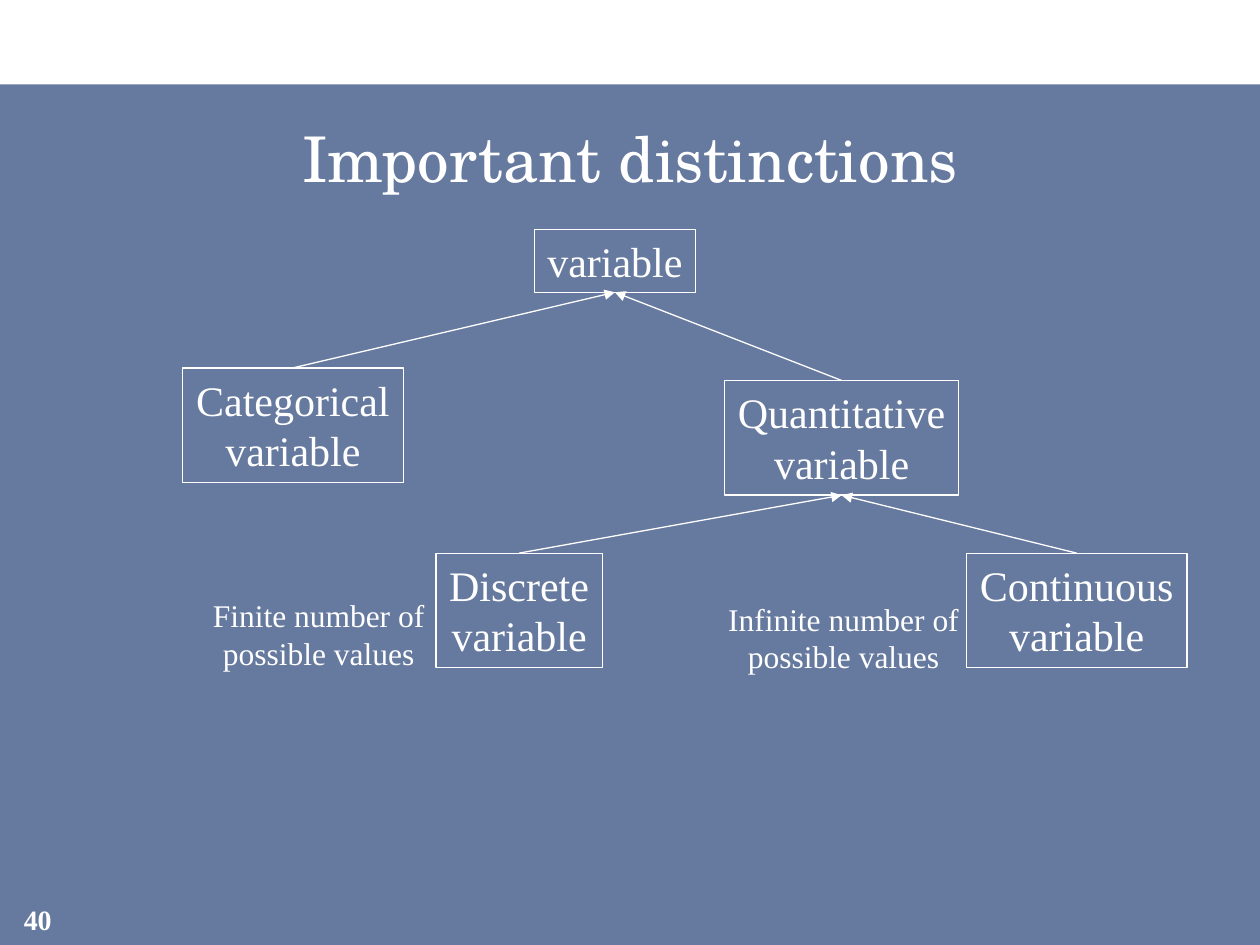
from lxml.etree import SubElement
from pptx import Presentation
from pptx.dml.color import RGBColor
from pptx.enum.shapes import MSO_CONNECTOR, MSO_SHAPE
from pptx.enum.text import MSO_ANCHOR, MSO_AUTO_SIZE, PP_ALIGN
from pptx.oxml.ns import qn
from pptx.util import Inches, Pt

COLOURS = {"panel": "002060", "ink": "FFFFFF"}
SERIF = "Times New Roman"
TITLE_FONT = "TeX Gyre Schola"
TOP, BOTTOM = 0, 2


def colour(name):
    return RGBColor.from_string(COLOURS[name])


def write(shape, lines, size, font=SERIF, bold=False, fit=False):
    """Fill a shape with centred lines; fit lets it grow around its text."""
    frame = shape.text_frame
    frame.word_wrap = not fit
    frame.auto_size = MSO_AUTO_SIZE.SHAPE_TO_FIT_TEXT if fit else MSO_AUTO_SIZE.NONE
    frame.vertical_anchor = MSO_ANCHOR.TOP if fit else MSO_ANCHOR.MIDDLE
    for index, line in enumerate(lines):
        paragraph = frame.add_paragraph() if index else frame.paragraphs[0]
        paragraph.alignment = PP_ALIGN.CENTER
        run = paragraph.add_run()
        run.text = line
        run.font.name = font
        run.font.size = Pt(size)
        run.font.bold = bold
        run.font.color.rgb = colour("ink")


def add_rectangle(slide, left, top, width, height):
    rectangle = slide.shapes.add_shape(
        MSO_SHAPE.RECTANGLE, Inches(left), Inches(top), Inches(width), Inches(height))
    rectangle.shadow.inherit = False
    return rectangle


def add_panel(slide):
    panel = add_rectangle(slide, 0, 0.67, 10, 6.83)
    panel.fill.solid()
    panel.fill.fore_color.rgb = colour("panel")
    panel.line.fill.background()
    # Let the white background through
    tint = panel.fill._xPr.find(qn("a:solidFill"))[0]
    SubElement(tint, qn("a:alpha"), val="60000")


def add_label(slide, left, top, width, height, lines, size, **style):
    label = slide.shapes.add_textbox(
        Inches(left), Inches(top), Inches(width), Inches(height))
    write(label, lines, size, **style)


def add_node(slide, left, top, width, *lines):
    height = 0.5 if len(lines) == 1 else 0.91
    node = add_rectangle(slide, left, top, width, height)
    node.fill.background()
    node.line.color.rgb = colour("ink")
    node.line.width = Pt(0.75)
    write(node, lines, 24, fit=True)
    return node


def add_arrow(slide, child, parent):
    arrow = slide.shapes.add_connector(MSO_CONNECTOR.STRAIGHT, 0, 0, 0, 0)
    arrow.begin_connect(child, TOP)
    arrow.end_connect(parent, BOTTOM)
    arrow.line.color.rgb = colour("ink")
    arrow.line.width = Pt(0.75)
    SubElement(arrow.line._get_or_add_ln(), qn("a:tailEnd"), type="triangle")
    SubElement(arrow._element.spPr, qn("a:effectLst"))


def main():
    presentation = Presentation()
    presentation.slide_width, presentation.slide_height = Inches(10), Inches(7.5)
    slide = presentation.slides.add_slide(presentation.slide_layouts[6])

    # Panel, slide number and title
    add_panel(slide)
    add_label(slide, 0, 7.1, 0.6, 0.4, ["40"], 16, bold=True)
    add_label(slide, 0.25, 0.83, 9.5, 0.83, ["Important distinctions"], 36,
              font=TITLE_FONT)

    # Tree of variable types
    variable = add_node(slide, 4.24, 1.82, 1.28, "variable")
    categorical = add_node(slide, 1.45, 2.92, 1.75, "Categorical", "variable")
    quantitative = add_node(slide, 5.75, 3.02, 1.86, "Quantitative", "variable")
    discrete = add_node(slide, 3.46, 4.39, 1.32, "Discrete", "variable")
    continuous = add_node(slide, 7.67, 4.39, 1.75, "Continuous", "variable")

    # Arrows from each type to its parent
    for child, parent in ((categorical, variable), (quantitative, variable),
                          (discrete, quantitative), (continuous, quantitative)):
        add_arrow(slide, child, parent)

    # Notes beside the quantitative types
    for left, top, width, amount in ((1.58, 4.68, 1.9, "Finite"),
                                     (5.67, 4.71, 2.05, "Infinite")):
        add_label(slide, left, top, width, 0.71,
                  [f"{amount} number of", "possible values"], 18, fit=True)

    presentation.save("out.pptx")


if __name__ == "__main__":
    main()
